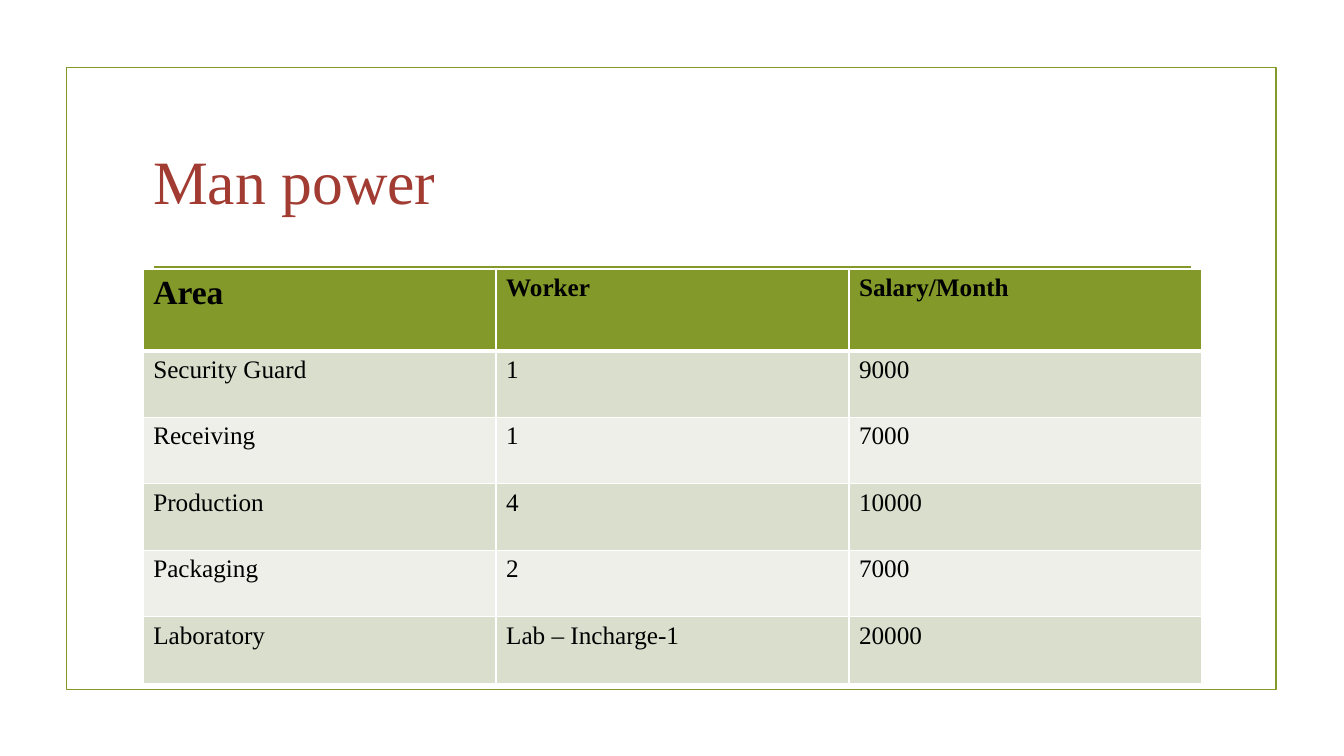
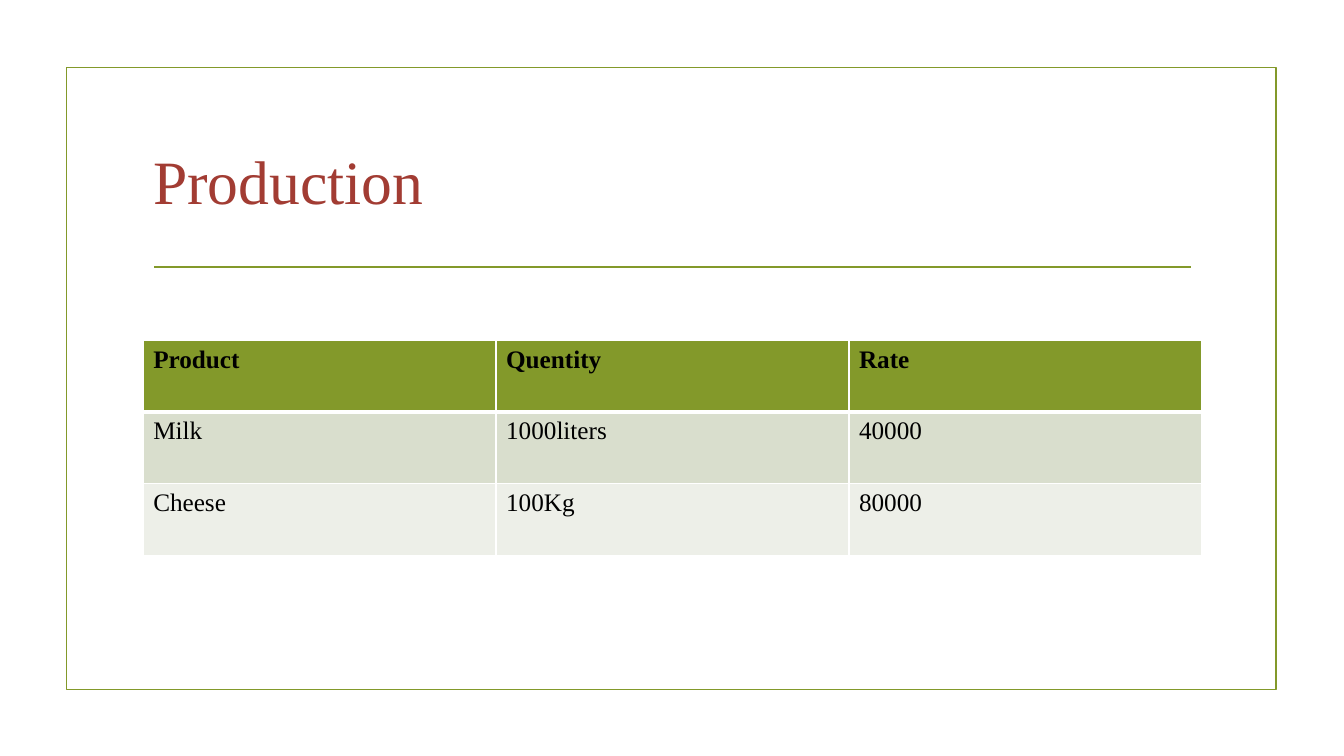
from lxml import etree
from pptx import Presentation
from pptx.dml.color import RGBColor
from pptx.enum.shapes import MSO_CONNECTOR, MSO_SHAPE
from pptx.enum.text import MSO_ANCHOR
from pptx.oxml.ns import qn
from pptx.util import Inches, Pt

RECTANGLE = MSO_SHAPE.RECTANGLE
STRAIGHT = MSO_CONNECTOR.STRAIGHT
MIDDLE = MSO_ANCHOR.MIDDLE

COLOURS = {
    "accent": "83992A",
    "title": "A23C33",
    "text": "000000",
    "band_dark": "D9DECD",
    "band_light": "EDEFE8",
    "grid": "FFFFFF",
}
FONT = "Times New Roman"
TITLE_FORMAT = {"name": FONT, "size": Pt(44), "bold": False}
HEADER_FORMAT = {"name": FONT, "size": Pt(18), "bold": True}
BODY_FORMAT = {"name": FONT, "size": Pt(18), "bold": False}
LEFT, WIDTH = 1.42, 10.5

MAN_POWER = [
    ("Area", "Worker", "Salary/Month"),
    ("Security Guard", "1", "9000"),
    ("Receiving", "1", "7000"),
    ("Production", "4", "10000"),
    ("Packaging", "2", "7000"),
    ("Laboratory", "Lab – Incharge-1", "20000"),
]
PRODUCTION = [
    ("Product", "Quentity", "Rate"),
    ("Milk", "1000liters", "40000"),
    ("Cheese", "100Kg", "80000"),
]


class Deck:
    """Holds the shared style and the slide being built."""

    def __init__(self):
        self.presentation = Presentation()
        self.presentation.slide_width = Inches(13.33)
        self.presentation.slide_height = Inches(7.5)
        self.slide = None

    def colour(self, key):
        return RGBColor.from_string(COLOURS[key])

    def add_slide(self, heading):
        blank = self.presentation.slide_layouts[6]
        self.slide = self.presentation.slides.add_slide(blank)
        self.frame()
        self.rule()
        self.title(heading)

    def outline(self, line):
        line.color.rgb = self.colour("accent")
        line.width = Pt(1.25)

    def frame(self):
        border = self.slide.shapes.add_shape(
            RECTANGLE, Inches(0.66), Inches(0.67), Inches(12), Inches(6.17))
        border.shadow.inherit = False
        border.fill.background()
        self.outline(border.line)

    def rule(self):
        divider = self.slide.shapes.add_connector(
            STRAIGHT, Inches(1.53), Inches(2.65), Inches(11.81), Inches(2.65))
        self.outline(divider.line)
        etree.SubElement(divider._element.spPr, qn("a:effectLst"))

    def add_text(self, text_frame, text, font_format, colour):
        run = text_frame.paragraphs[0].add_run()
        run.text = text
        for attribute, value in font_format.items():
            setattr(run.font, attribute, value)
        run.font.color.rgb = self.colour(colour)

    def title(self, heading):
        box = self.slide.shapes.add_textbox(
            Inches(LEFT), Inches(1.07), Inches(WIDTH), Inches(1.43))
        box.text_frame.word_wrap = True
        box.text_frame.vertical_anchor = MIDDLE
        self.add_text(box.text_frame, heading, TITLE_FORMAT, "title")

    def borders(self, cell, widths):
        properties = cell._tc.get_or_add_tcPr()
        for side, width in widths.items():
            edge = etree.SubElement(
                properties, qn(f"a:ln{side}"), w=str(Pt(width)))
            fill = etree.SubElement(edge, qn("a:solidFill"))
            etree.SubElement(fill, qn("a:srgbClr"), val=COLOURS["grid"])

    def table(self, rows, top, header_height, row_height, first_size=18):
        heights = [header_height] + [row_height] * (len(rows) - 1)
        grid = self.slide.shapes.add_table(
            len(rows), len(rows[0]), Inches(LEFT), Inches(top),
            Inches(WIDTH), Inches(sum(heights))).table
        for column in grid.columns:
            column.width = Inches(WIDTH / len(rows[0]))
        for r, (values, height) in enumerate(zip(rows, heights)):
            grid.rows[r].height = Inches(height)
            for c, value in enumerate(values):
                cell = grid.cell(r, c)
                self.borders(cell, {"L": 1, "R": 1,
                                    "T": 3 if r == 1 else 1,
                                    "B": 3 if r == 0 else 1})
                band = "band_dark" if r % 2 else "band_light"
                cell.fill.solid()
                cell.fill.fore_color.rgb = self.colour(
                    band if r else "accent")
                font_format = dict(BODY_FORMAT if r else HEADER_FORMAT)
                if r == c == 0:
                    font_format["size"] = Pt(first_size)
                self.add_text(cell.text_frame, value, font_format, "text")


def main():
    deck = Deck()
    deck.add_slide("Man power")
    deck.table(MAN_POWER, 2.67, 0.81, 0.66, first_size=24)
    deck.add_slide("Production")
    deck.table(PRODUCTION, 3.38, 0.71, 0.71)
    deck.presentation.save("out.pptx")


if __name__ == "__main__":
    main()
